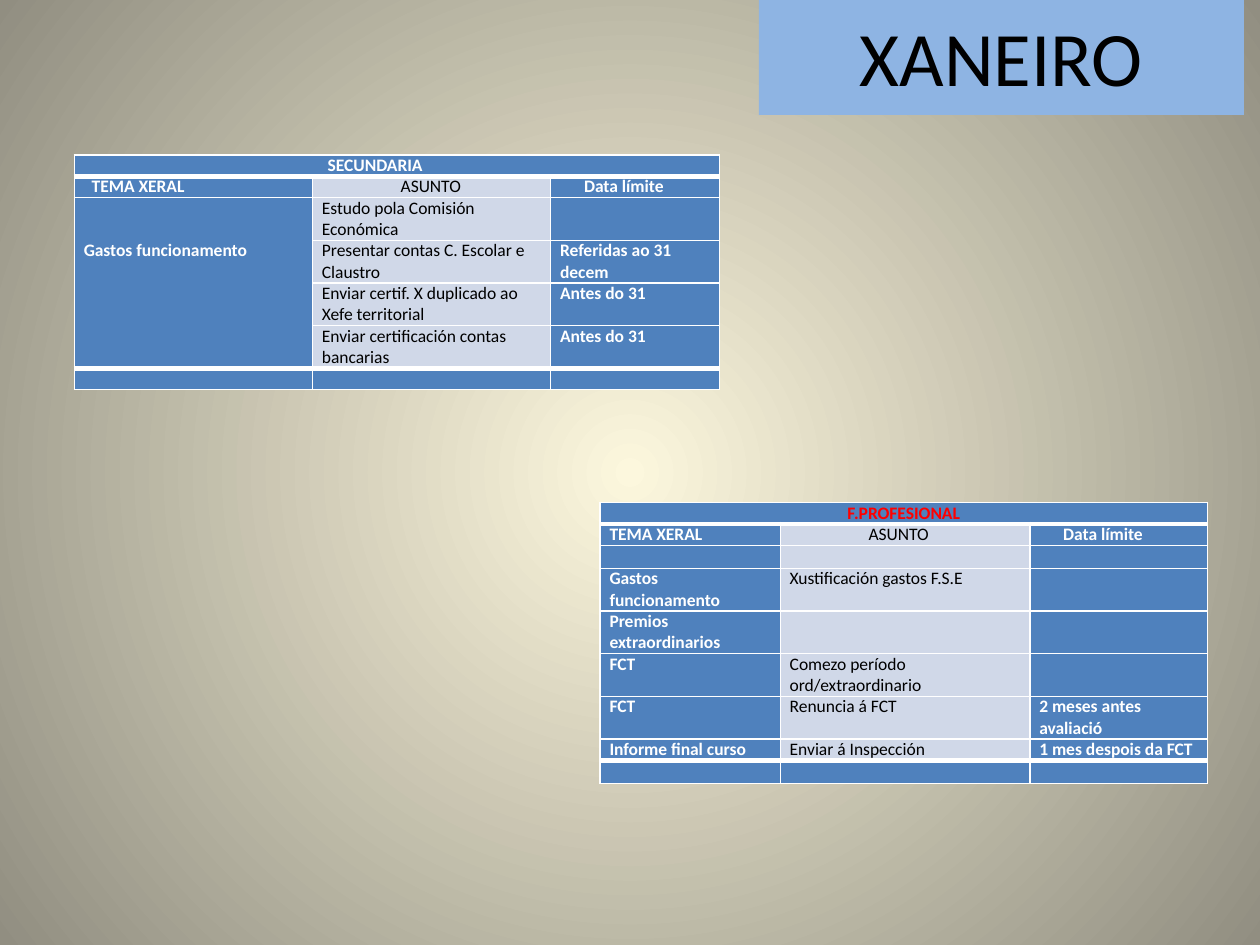
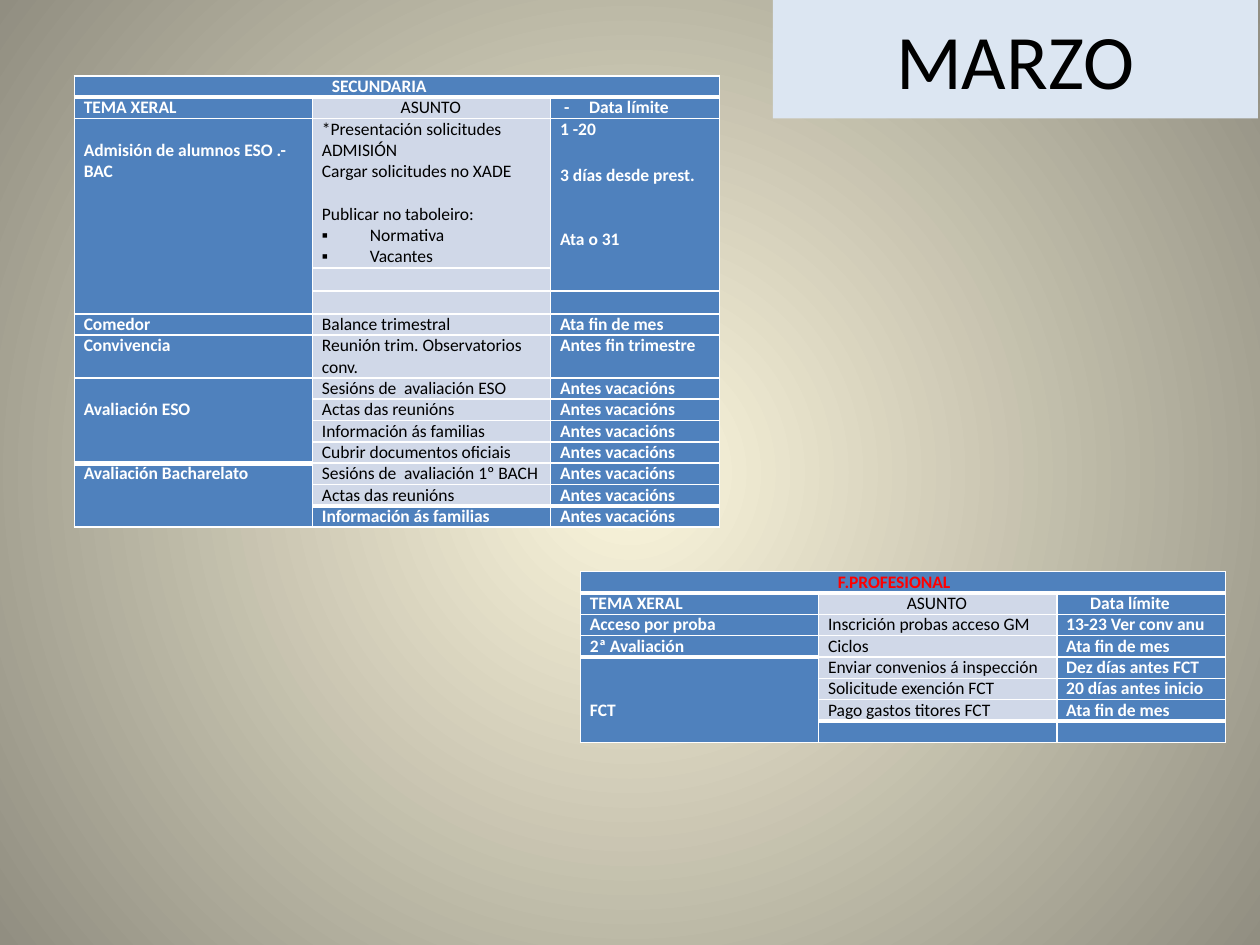
from lxml import etree
from pptx import Presentation
from pptx.dml.color import RGBColor
from pptx.enum import shapes, text
from pptx.oxml.ns import qn
from pptx.util import Pt

# Shared look
FONT = "Calibri"
BLUE, PALE, WHITE, BLACK, RED = "4F81BD", "D0D8E8", "FFFFFF", "000000", "FF0000"
GLOW, SHADE = "FCF7DD", "918E81"
LINE = 12.2          # height of one text line
SPACER = 1.08        # height of an empty row, in lines
INSET = 5.4
TITLE_SIZE = (277.2, 67.7)
WIDE_COLUMNS = (136.1, 136.1, 96.5)

# Content: a cell is a string, a dict with details, or None when merged away
ASUNTO = {"text": "ASUNTO", "indent": 45}
DATA_LIMITE = {"text": "Data límite", "indent": 13.7}
HEADINGS = (1, "TEMA XERAL", ASUNTO, DATA_LIMITE)
VACATION = "Antes vacacións"

# Each row: height in lines, tema, asunto, data
JANUARY_SECONDARY = [
    (1, {"text": "SECUNDARIA", "indent": 139.4}, None, None),
    (1, {"text": "TEMA XERAL", "indent": 4.5}, ASUNTO, DATA_LIMITE),
    (2, {"text": "Gastos funcionamento", "rows": 4, "above": 2},
     "Estudo pola Comisión Económica", ""),
    (2, None, "Presentar contas C. Escolar e Claustro", "Referidas ao 31 decem"),
    (2, None, "Enviar certif. X duplicado ao Xefe territorial", "Antes do 31"),
    (2, None, "Enviar certificación contas bancarias", "Antes do 31"),
    (1, "", "", ""),
]
JANUARY_VOCATIONAL = [
    (1, {"text": "F.PROFESIONAL", "color": RED, "centered": True}, None, None),
    HEADINGS,
    (SPACER, "", "", ""),
    (2, "Gastos funcionamento", "Xustificación gastos F.S.E", ""),
    (2, "Premios extraordinarios", "", ""),
    (2, "FCT", "Comezo período ord/extraordinario", ""),
    (2, "FCT", "Renuncia á FCT", "2 meses antes avaliació"),
    (1, "Informe final curso", "Enviar á Inspección", "1 mes despois da FCT"),
    (SPACER, "", "", ""),
]
MARCH_SECONDARY = [
    (1, {"text": "SECUNDARIA", "indent": 141.7}, None, None),
    (1, "TEMA XERAL", ASUNTO,
     {"text": "-\tData límite", "indent": 2.3, "hanging": {0: 14.3}}),
    (7, {"text": "Admisión de alumnos ESO .-BAC", "rows": 3, "above": 1},
     {"text": "*Presentación solicitudes ADMISIÓN\nCargar solicitudes no XADE\n"
              "Publicar no taboleiro:\nNormativa\nVacantes",
      "gaps": {2: 1}, "hanging": {3: 27.4, 4: 27.4}, "bullet": "▪"},
     {"text": "1 -20\n3 días desde prest.\nAta o 31", "rows": 2, "gaps": {1: 1.2, 2: 2}}),
    (SPACER, None, "", None),
    (SPACER, None, "", ""),
    (1, "Comedor", "Balance trimestral", "Ata fin de mes"),
    (2, "Convivencia", "Reunión trim. Observatorios conv.", "Antes fin trimestre"),
    (1, {"text": "Avaliación ESO", "rows": 4, "above": 1},
     "Sesións de  avaliación ESO", VACATION),
    (1, None, "Actas das reunións", VACATION),
    (1, None, "Información ás familias", VACATION),
    (1, None, "Cubrir documentos oficiais", VACATION),
    (1, {"text": "Avaliación Bacharelato", "rows": 3},
     "Sesións de  avaliación 1º BACH", VACATION),
    (1, None, "Actas das reunións", VACATION),
    (1, None, "Información ás familias", VACATION),
]
MARCH_VOCATIONAL = [
    (1, {"text": "F.PROFESIONAL", "color": RED, "indent": 141.7}, None, None),
    HEADINGS,
    (1, "Acceso por proba", "Inscrición probas acceso GM", "13-23 Ver conv anu"),
    (1, "2ª Avaliación", "Ciclos", "Ata fin de mes"),
    (1, {"text": "FCT", "rows": 4, "above": 2},
     "Enviar convenios á inspección", "Dez días antes FCT"),
    (1, None, "Solicitude exención FCT", "20 días antes inicio"),
    (1, None, "Pago gastos titores FCT", "Ata fin de mes"),
    (1, None, "", ""),
]

# Month, banner colour, banner corner, tables as (left, top, columns, rows)
MONTHS = [
    ("XANEIRO", "8EB4E3", (433.6, -2), [
        (42.5, 88.6, WIDE_COLUMNS, JANUARY_SECONDARY),
        (342.9, 287.2, (103, 142.6, 101.4), JANUARY_VOCATIONAL)]),
    ("MARZO", "DCE6F2", (441.6, 0), [
        (42.5, 43.3, WIDE_COLUMNS, MARCH_SECONDARY),
        (331.7, 326.7, WIDE_COLUMNS, MARCH_VOCATIONAL)]),
]


def rgb(value):
    return RGBColor.from_string(value)


def set_font(paragraph, size, color, bold=False):
    font = paragraph.font
    font.name, font.size, font.bold = FONT, Pt(size), bold
    font.color.rgb = rgb(color)


def paint_background(slide):
    fill = slide.background.fill
    fill.gradient()
    for stop, color, position in zip(fill.gradient_stops, (GLOW, SHADE), (0, 1)):
        stop.color.rgb = rgb(color)
        stop.position = position
    gradient = slide.element.xpath(".//a:gradFill")[0]
    for linear in gradient.findall(qn("a:lin")):
        gradient.remove(linear)
    circle = etree.SubElement(gradient, qn("a:path"), path="circle")
    etree.SubElement(circle, qn("a:fillToRect"), l="50000", t="50000", r="50000", b="50000")


def add_banner(slide, month, color, corner):
    banner = slide.shapes.add_shape(
        shapes.MSO_SHAPE.RECTANGLE, *map(Pt, corner + TITLE_SIZE))
    banner.shadow.inherit = False
    banner.fill.solid()
    banner.fill.fore_color.rgb = rgb(color)
    banner.line.fill.background()
    frame = banner.text_frame
    frame.vertical_anchor = text.MSO_ANCHOR.MIDDLE
    paragraph = frame.paragraphs[0]
    paragraph.text = month
    paragraph.alignment = text.PP_ALIGN.CENTER
    set_font(paragraph, 44, BLACK)


def set_borders(cell, top, bottom):
    properties = cell._tc.get_or_add_tcPr()
    for side, width in (("L", 1), ("R", 1), ("T", top), ("B", bottom)):
        line = etree.SubElement(properties, qn("a:ln" + side), w=str(Pt(width)))
        solid = etree.SubElement(line, qn("a:solidFill"))
        etree.SubElement(solid, qn("a:srgbClr"), val=WHITE)


def set_indent(paragraph, indent, hang):
    properties = paragraph._p.get_or_add_pPr()
    properties.set("marL", str(Pt(indent + hang)))
    properties.set("indent", str(-Pt(hang)))


def add_bullet(paragraph, character):
    defaults = paragraph._p.get_or_add_pPr().find(qn("a:defRPr"))
    defaults.addprevious(etree.Element(qn("a:buFont"), typeface=FONT))
    defaults.addprevious(etree.Element(qn("a:buChar"), char=character))
    # The bullet takes its size from the first run
    paragraph.runs[0].font.size = paragraph.font.size


def fill_text(cell, details, color, bold):
    cell.margin_left = cell.margin_right = Pt(INSET)
    cell.margin_top = Pt(LINE * details.get("above", 0))
    cell.margin_bottom = 0
    cell.text = details.get("text", "")
    gaps, hanging = details.get("gaps", {}), details.get("hanging", {})
    for index, paragraph in enumerate(cell.text_frame.paragraphs):
        set_font(paragraph, 10, details.get("color", color), bold)
        set_indent(paragraph, details.get("indent", 0), hanging.get(index, 0))
        if details.get("centered"):
            paragraph.alignment = text.PP_ALIGN.CENTER
        if index in gaps:
            paragraph.space_before = Pt(LINE * gaps[index])
        if index in hanging and "bullet" in details:
            add_bullet(paragraph, details["bullet"])
        if not paragraph.runs:
            paragraph._p.get_or_add_endParaRPr().set("sz", "1000")


def add_agenda(slide, left, top, columns, rows):
    height = LINE * sum(row[0] for row in rows)
    frame = slide.shapes.add_table(
        len(rows), len(columns), Pt(left), Pt(top), Pt(sum(columns)), Pt(height))
    table = frame.table
    for column, width in zip(table.columns, columns):
        column.width = Pt(width)
    last = len(rows) - 1
    for r, (lines, *contents) in enumerate(rows):
        table.rows[r].height = Pt(LINE * lines)
        for c, content in enumerate(contents):
            cell = table.cell(r, c)
            details = content if isinstance(content, dict) else {"text": content or ""}
            span = details.get("rows", 1)
            # The middle column is pale, except in the first and last rows
            pale = c == 1 and 0 < r < last
            closes_table = content is not None and r + span - 1 == last
            set_borders(cell, 3 if closes_table else 1, 3 if r == 0 else 1)
            cell.fill.solid()
            cell.fill.fore_color.rgb = rgb(PALE if pale else BLUE)
            fill_text(cell, details, BLACK if pale else WHITE, not pale)
            if span > 1:
                cell.merge(table.cell(r + span - 1, c))
    table.cell(0, 0).merge(table.cell(0, len(columns) - 1))


def main():
    presentation = Presentation()
    presentation.slide_width, presentation.slide_height = Pt(720), Pt(540)
    for month, color, corner, agendas in MONTHS:
        slide = presentation.slides.add_slide(presentation.slide_layouts[6])
        paint_background(slide)
        add_banner(slide, month, color, corner)
        for agenda in agendas:
            add_agenda(slide, *agenda)
    presentation.save("out.pptx")


if __name__ == "__main__":
    main()
